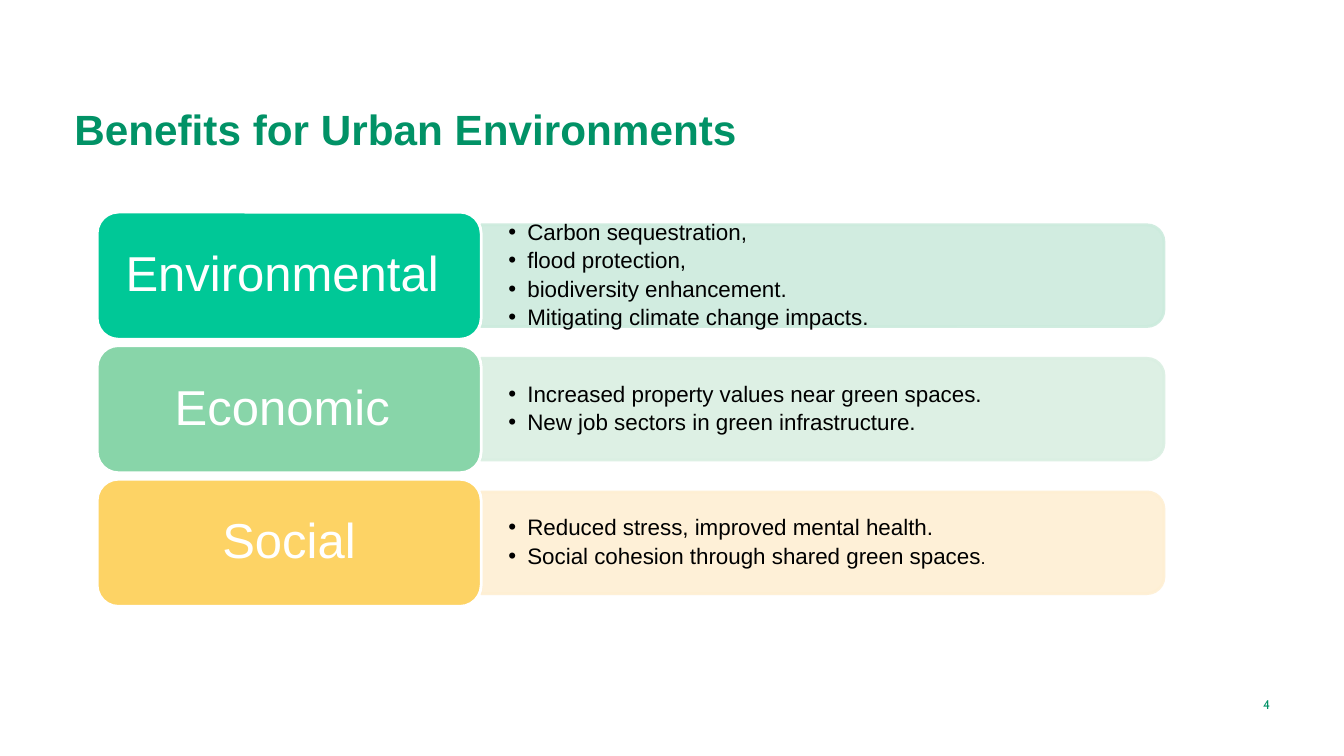
from lxml import etree
from pptx import Presentation
from pptx.dml.color import RGBColor
from pptx.enum import shapes as s, text as t
from pptx.oxml import ns
from pptx.util import Pt

GREEN = RGBColor(0x01, 0x92, 0x66)
WHITE = RGBColor(0xFF, 0xFF, 0xFF)
BLACK = RGBColor(0, 0, 0)
BENEFITS = [
    ("Environmental ", RGBColor(0x00, 0xC8, 0x97), RGBColor(0xCC, 0xEB, 0xDD),
     ["Carbon sequestration,", "flood protection,", "biodiversity enhancement.",
      "Mitigating climate change impacts."]),
    ("Economic ", RGBColor(0x88, 0xD5, 0xA9), RGBColor(0xDA, 0xEF, 0xE2),
     ["Increased property values near green spaces.",
      "New job sectors in green infrastructure."]),
    ("Social", RGBColor(0xFD, 0xD3, 0x65), RGBColor(0xFE, 0xEF, 0xD3),
     ["Reduced stress, improved mental health.",
      "Social cohesion through shared green spaces."]),
]


def set_frame(frame, anchor, side, top):
    frame.word_wrap = True
    frame.vertical_anchor = anchor
    frame.margin_left = frame.margin_right = Pt(side)
    frame.margin_top = frame.margin_bottom = Pt(top)


def set_font(font, size, color, face="Arial", bold=False):
    font.name, font.size, font.bold = face, Pt(size), bold
    font.color.rgb = color


def add_line(slide, box, wording, anchor, align, **style):
    frame = slide.shapes.add_textbox(*map(Pt, box)).text_frame
    set_frame(frame, anchor, 7.2, 3.6)
    frame.text = wording
    frame.paragraphs[0].alignment = align
    set_font(frame.paragraphs[0].runs[0].font, **style)


def add_rounded(slide, kind, box, fill, outline):
    rounded = slide.shapes.add_shape(kind, *map(Pt, box))
    rounded.shadow.inherit = False
    rounded.fill.solid()
    rounded.fill.fore_color.rgb = fill
    rounded.line.color.rgb = outline
    rounded.line.width = Pt(2)
    return rounded


def add_panel(slide, box, tint):
    left, top, width, height = box
    upright = (left + (width - height) / 2, top + (height - width) / 2, height, width)
    panel = add_rounded(slide, s.MSO_SHAPE.ROUND_2_SAME_RECTANGLE, upright, tint, tint)
    panel.rotation = 90
    for color in panel.element.spPr.iter(ns.qn("a:srgbClr")):
        etree.SubElement(color, ns.qn("a:alpha"), val="90000")


def add_points(slide, box, points):
    frame = slide.shapes.add_textbox(*map(Pt, box)).text_frame
    set_frame(frame, t.MSO_ANCHOR.MIDDLE, 19.5, 9.75)
    frame.text = "\n".join(points)
    for point in frame.paragraphs:
        props = point._p.get_or_add_pPr()
        props.set("marL", str(Pt(13.5)))
        props.set("indent", str(-Pt(13.5)))
        etree.SubElement(props, ns.qn("a:buFont"), typeface="Arial")
        etree.SubElement(props, ns.qn("a:buChar"), char="•")
        point.line_spacing = 0.9
        point.space_after = Pt(3)
        set_font(point.runs[0].font, 16, BLACK)
    return frame


def add_label(slide, box, wording, fill):
    label = add_rounded(slide, s.MSO_SHAPE.ROUNDED_RECTANGLE, box, fill, WHITE)
    frame = label.text_frame
    set_frame(frame, t.MSO_ANCHOR.MIDDLE, 15, 9)
    frame.text = wording
    frame.paragraphs[0].alignment = t.PP_ALIGN.CENTER
    frame.paragraphs[0].line_spacing = 0.9
    set_font(frame.paragraphs[0].runs[0].font, 35, WHITE)


def add_benefit(slide, box, wording, fill, tint, points):
    left, top, width, height = box
    label_width = 274.3
    panel_top, panel_height = top + height * 0.1, height * 0.8
    panel_left, panel_width = left + label_width, width - label_width
    add_panel(slide, (panel_left, panel_top, panel_width, panel_height), tint)
    points_frame = add_points(
        slide, (panel_left, panel_top + 3.6, panel_width - 3.6, panel_height - 7.2), points)
    add_label(slide, (left, top, label_width, height), wording, fill)
    return points_frame


def add_benefits(slide, box):
    left, top, width, height = box
    row_height = 90.8
    pitch = (height - row_height) / (len(BENEFITS) - 1)
    for row, benefit in enumerate(BENEFITS):
        points_frame = add_benefit(
            slide, (left, top + row * pitch, width, row_height), *benefit)
    closing = points_frame.paragraphs[-1]
    closing.runs[0].text = closing.text.rstrip(".")
    stop = closing.add_run()
    stop.text = "."
    set_font(stop.font, 13, BLACK)


def main():
    deck = Presentation()
    deck.slide_width, deck.slide_height = Pt(960), Pt(540)
    slide = deck.slides.add_slide(deck.slide_layouts[6])
    add_line(slide, (46, 76.3, 501, 37.5), "Benefits for Urban Environments",
             t.MSO_ANCHOR.BOTTOM, t.PP_ALIGN.LEFT, size=30.2, color=GREEN, bold=True)
    add_benefits(slide, (69.4, 151.5, 762, 281.6))
    add_line(slide, (831.6, 489, 82.8, 28.8), "4",
             t.MSO_ANCHOR.MIDDLE, t.PP_ALIGN.RIGHT, size=9, color=GREEN, face="Cabin")
    deck.save("out.pptx")


if __name__ == "__main__":
    main()
